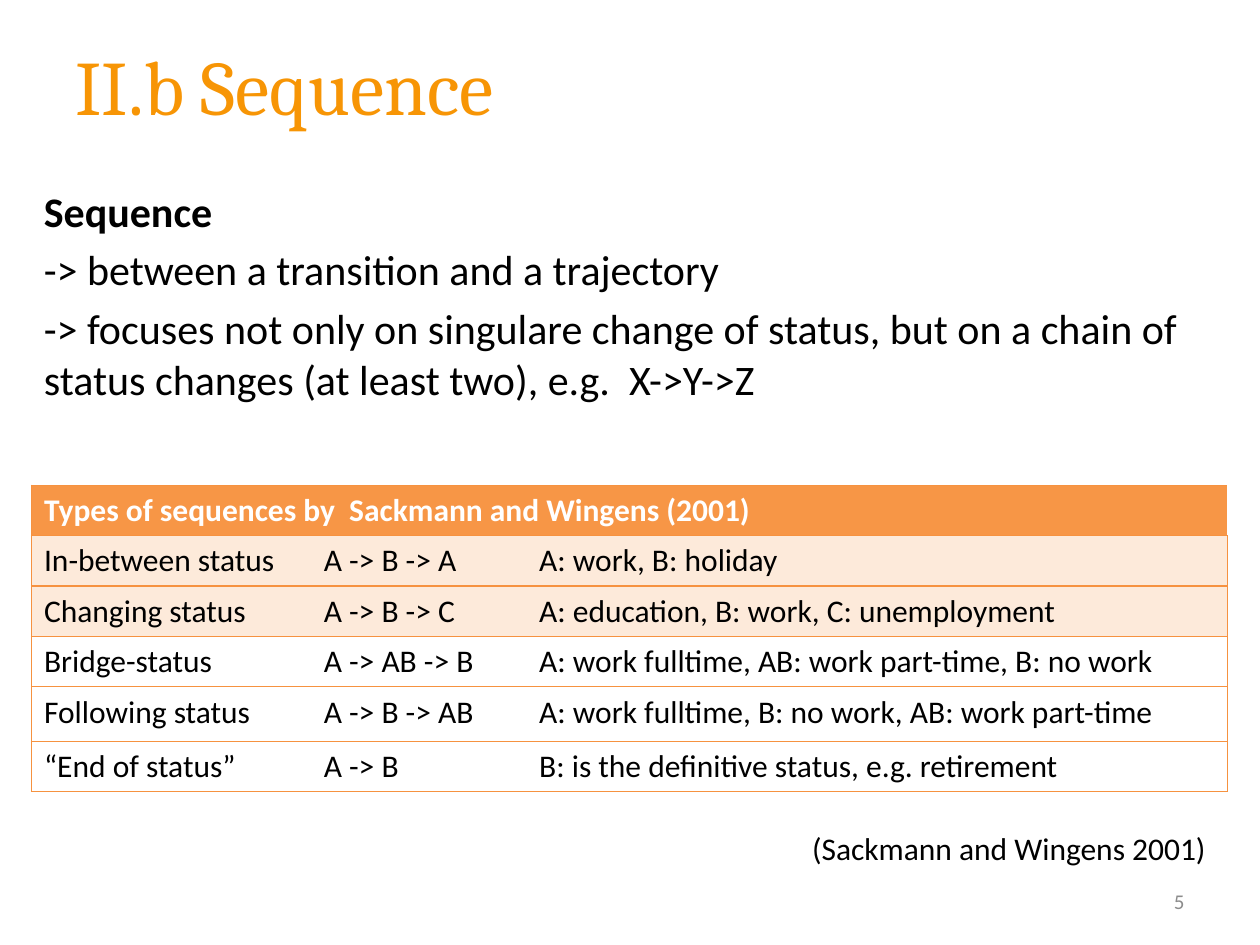
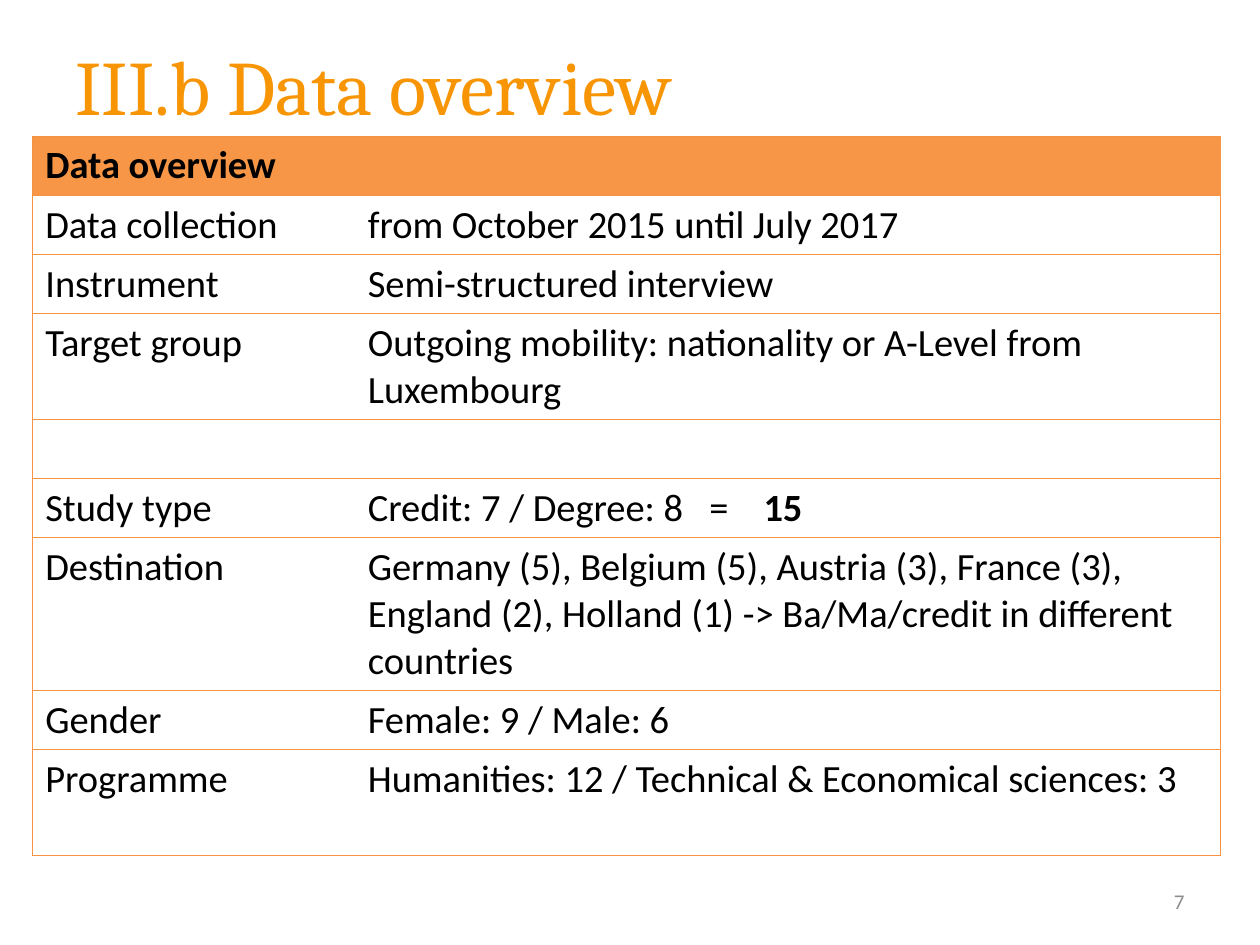
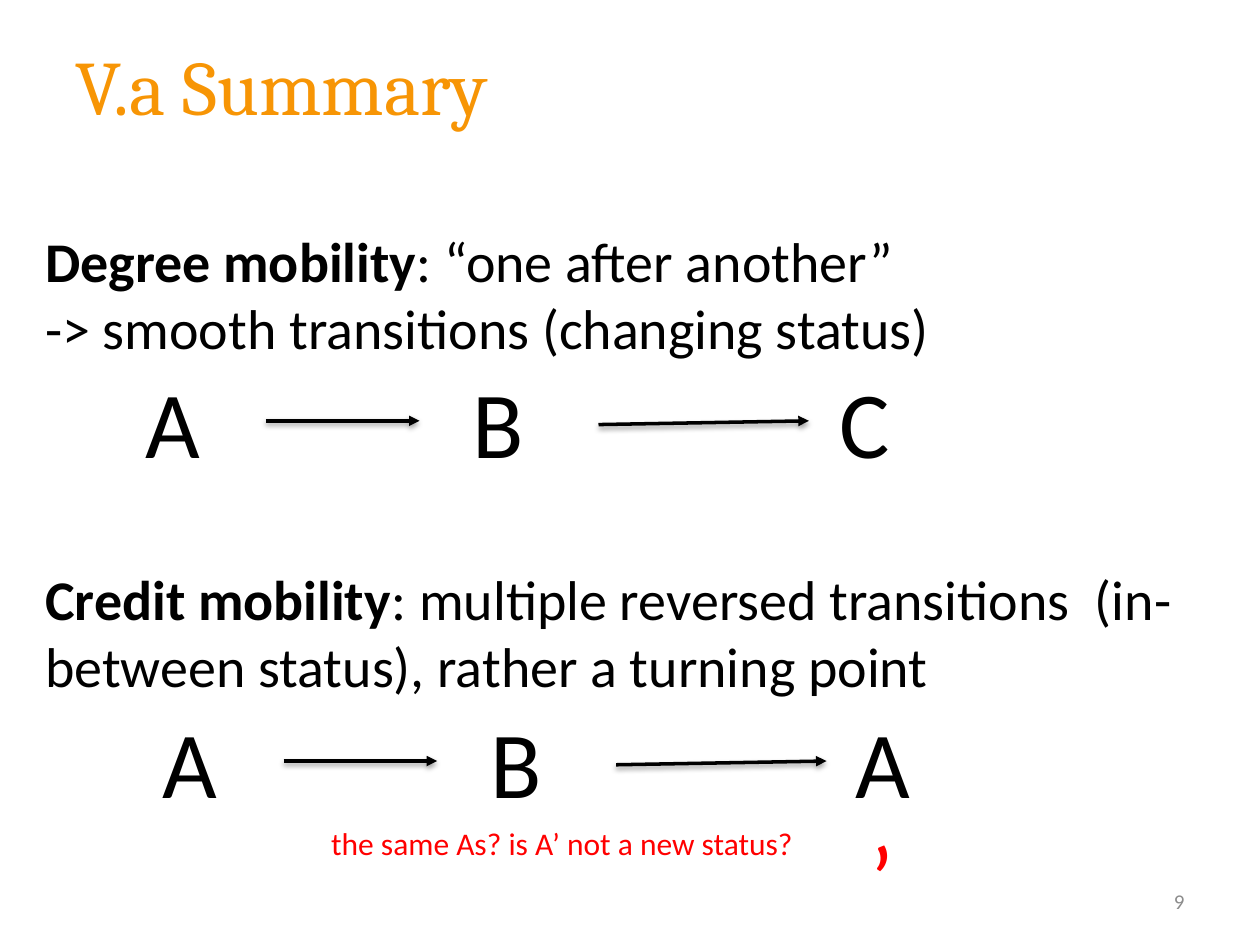
from dataclasses import dataclass

from lxml.etree import SubElement
from pptx import Presentation
from pptx.dml.color import RGBColor
from pptx.enum.shapes import MSO_CONNECTOR
from pptx.enum.text import MSO_ANCHOR, PP_ALIGN
from pptx.oxml import parse_xml
from pptx.oxml.ns import nsdecls, qn
from pptx.util import Emu, Pt

PX = 9144  # one px is a hundredth of an inch


# Colours and type
@dataclass(frozen=True)
class Theme:
    title_font: str = "Cambria"
    body_font: str = "Calibri"
    title: str = "F79505"
    text: str = "000000"
    muted: str = "8C8C8C"
    light: str = "FFFFFF"
    accent: str = "F79646"
    tint: str = "FDEADA"
    rule: str = "F69240"
    alert: str = "FF0000"
    title_size: int = 44
    letter_size: int = 54
    summary_size: int = 32
    body_size: int = 24
    data_size: int = 22
    note_size: int = 18
    number_size: int = 12
    rule_width: float = 0.75
    arrow_width: int = 2


THEME = Theme()


@dataclass(frozen=True)
class Span:
    text: str
    bold: bool = False
    color: str = THEME.text


# Elements
class Deck:
    def __init__(self, theme):
        self.theme = theme
        self.show = Presentation()
        self.show.slide_width = Emu(1000 * PX)
        self.show.slide_height = Emu(750 * PX)
        self.page = None

    def add_page(self, title, number):
        theme = self.theme
        self.page = self.show.slides.add_slide(self.show.slide_layouts[6])
        self.text((50, 5, 950, 125), [[Span(title, color=theme.title)]], theme.title_size,
                  font=theme.title_font, anchor=MSO_ANCHOR.MIDDLE)
        self.text((717, 695, 233, 40), [[Span(str(number), color=theme.muted)]],
                  theme.number_size, align=PP_ALIGN.RIGHT, anchor=MSO_ANCHOR.MIDDLE)

    def add_spans(self, para, spans, size, font=None):
        for span in spans:
            run = para.add_run()
            run.text = span.text
            run.font.name = font or self.theme.body_font
            run.font.size = Pt(size)
            run.font.bold = span.bold
            run.font.color.rgb = RGBColor.from_string(span.color)

    def text(self, place, paras, size, font=None, align=PP_ALIGN.LEFT,
             anchor=MSO_ANCHOR.TOP, wrap=True, gaps=()):
        box = self.page.shapes.add_textbox(*(Emu(length * PX) for length in place))
        frame = box.text_frame
        frame.word_wrap = wrap
        frame.vertical_anchor = anchor
        for index, spans in enumerate(paras):
            para = frame.paragraphs[0] if index == 0 else frame.add_paragraph()
            para.alignment = align
            if gaps:
                para.space_before = Pt(gaps[index])
            self.add_spans(para, spans, size, font)

    def cell_border(self, cell, side, visible):
        line = SubElement(cell._tc.get_or_add_tcPr(), qn(f"a:ln{side}"),
                          w=str(Pt(self.theme.rule_width)))
        if visible:
            fill = SubElement(line, qn("a:solidFill"))
            SubElement(fill, qn("a:srgbClr"), val=self.theme.rule)
        else:
            SubElement(line, qn("a:noFill"))

    def table(self, left, top, widths, heights, rows, size, fills, tabs=()):
        """Rows hold lists of spans; the first row is one merged heading."""
        frame = self.page.shapes.add_table(
            len(rows), len(widths), Emu(left * PX), Emu(top * PX),
            Emu(sum(widths) * PX), Emu(sum(heights) * PX))
        table = frame.table
        table.first_row = table.horz_banding = False
        for column, width in zip(table.columns, widths):
            column.width = Emu(width * PX)
        for row, height in zip(table.rows, heights):
            row.height = Emu(height * PX)
        last = len(widths) - 1
        for row, contents, fill in zip(table.rows, rows, fills):
            for index, cell in enumerate(row.cells):
                borders = {"L": index == 0, "R": index == last, "T": True, "B": True}
                for side, visible in borders.items():
                    self.cell_border(cell, side, visible)
                if fill:
                    cell.fill.solid()
                    cell.fill.fore_color.rgb = RGBColor.from_string(fill)
                else:
                    cell.fill.background()
                if index < len(contents):
                    para = cell.text_frame.paragraphs[0]
                    if any("\t" in span.text for span in contents[index]):
                        self.tab_stops(para, tabs)
                    self.add_spans(para, contents[index], size)
        table.cell(0, 0).merge(table.cell(0, last))

    def tab_stops(self, para, tabs):
        stops = SubElement(para._p.get_or_add_pPr(), qn("a:tabLst"))
        for tab in tabs:
            SubElement(stops, qn("a:tab"), pos=str(tab * PX), algn="l")

    def arrow(self, start, end):
        ends = (Emu(length * PX) for length in (*start, *end))
        arrow = self.page.shapes.add_connector(MSO_CONNECTOR.STRAIGHT, *ends)
        arrow.line.width = Pt(self.theme.arrow_width)
        arrow.line.color.rgb = RGBColor.from_string(self.theme.text)
        SubElement(arrow.line._get_or_add_ln(), qn("a:tailEnd"), type="triangle")
        arrow._element.spPr.append(parse_xml(
            f'<a:effectLst {nsdecls("a")}><a:outerShdw blurRad="{Pt(3.1)}" '
            f'dist="{Pt(1.6)}" dir="5400000" rotWithShape="0">'
            f'<a:srgbClr val="{self.theme.text}"><a:alpha val="38000"/></a:srgbClr>'
            '</a:outerShdw></a:effectLst>'))

    def chain(self, left, top, last_spans, last_left, last_width):
        """Three statuses joined by two arrows."""
        letters = [([Span("A")], left, 64), ([Span("B")], left + 260, 61),
                   (last_spans, last_left, last_width)]
        for spans, letter_left, width in letters:
            self.text((letter_left, top, width, 101), [spans], self.theme.letter_size,
                      align=PP_ALIGN.CENTER, wrap=len(spans) > 1)
        middle = top + 50
        self.arrow((left + 106, middle), (left + 228, middle))
        self.arrow((left + 370, middle + 3), (left + 537, middle))


def plain_rows(rows):
    return [[[Span(text)] for text in row] for row in rows]


# Slides
def sequence_page(deck):
    theme = deck.theme
    deck.add_page("II.b Sequence", 5)
    deck.text((25, 142, 1000, 495), [
        [Span("Sequence", bold=True)],
        [Span("-> between a transition and a trajectory")],
        [Span("-> focuses not only on singulare change of status, but on a chain of "
              "status changes (at least two), e.g.  X->Y->Z")],
    ], theme.body_size, gaps=[4.8] * 3)
    heading = [[Span("Types of sequences by  Sackmann and Wingens (2001)", True, theme.light)]]
    types = plain_rows([
        ("In-between status", "A -> B -> A", "A: work, B: holiday"),
        ("Changing status", "A -> B -> C", "A: education, B: work, C: unemployment"),
        ("Bridge-status", "A -> AB -> B", "A: work fulltime, AB: work part-time, B: no work"),
        ("Following status", "A -> B -> AB", "A: work fulltime, B: no work, AB: work part-time"),
        ("“End of status”", "A -> B", "B: is the definitive status, e.g. retirement"),
    ])
    deck.table(25, 385, (222, 171, 556), (40, 40, 40, 40, 43, 40), [heading, *types],
               theme.note_size, [theme.accent] + [theme.tint] * 2 + [None] * 3)
    deck.text((467, 653, 500, 40), [[Span("(Sackmann and Wingens 2001)")]],
              theme.note_size, align=PP_ALIGN.RIGHT)


def data_page(deck):
    theme = deck.theme
    deck.add_page("III.b Data overview", 7)
    rows = [
        [[Span("Data overview", bold=True)]],
        *plain_rows([
            ("Data collection", "from October 2015 until July 2017"),
            ("Instrument", "Semi-structured interview"),
            ("Target group", "Outgoing mobility: nationality or A-Level from Luxembourg"),
            (),
        ]),
        [[Span("Study type")],
         [Span("Credit: 7 / Degree: 8\t=\t"), Span("15", bold=True)]],
        *plain_rows([
            ("Destination", "Germany (5), Belgium (5), Austria (3), France (3), England (2), "
             "Holland (1) -> Ba/Ma/credit in different countries"),
            ("Gender", "Female: 9 / Male: 6"),
            ("Programme", "Humanities: 12 / Technical & Economical sciences: 3"),
        ]),
    ]
    deck.table(26, 108, (256, 687), (47, 47, 47, 84, 47, 47, 121, 47, 84), rows,
               theme.data_size, [theme.accent] + [None] * 8, tabs=(271, 314))


def summary_page(deck):
    theme = deck.theme
    deck.add_page("V.a Summary", 9)
    deck.text((26, 175, 962, 520), [
        [Span("Degree mobility", bold=True), Span(": “one after another”")],
        [Span("-> smooth transitions (changing status)")],
        [Span("Credit mobility", bold=True),
         Span(": multiple reversed transitions  (in-between status), rather a turning point")],
    ], theme.summary_size, gaps=(0, 0, 116))
    deck.chain(105, 284, [Span("C")], 656, 61)
    deck.chain(119, 554, [Span("A"), Span("’", color=theme.alert)], 660, 81)
    deck.text((253, 649, 391, 71),
              [[Span("the same As? is A’ not a new status?", color=theme.alert)]],
              theme.note_size, wrap=False)


def main():
    deck = Deck(THEME)
    sequence_page(deck)
    data_page(deck)
    summary_page(deck)
    deck.show.save("out.pptx")


if __name__ == "__main__":
    main()
